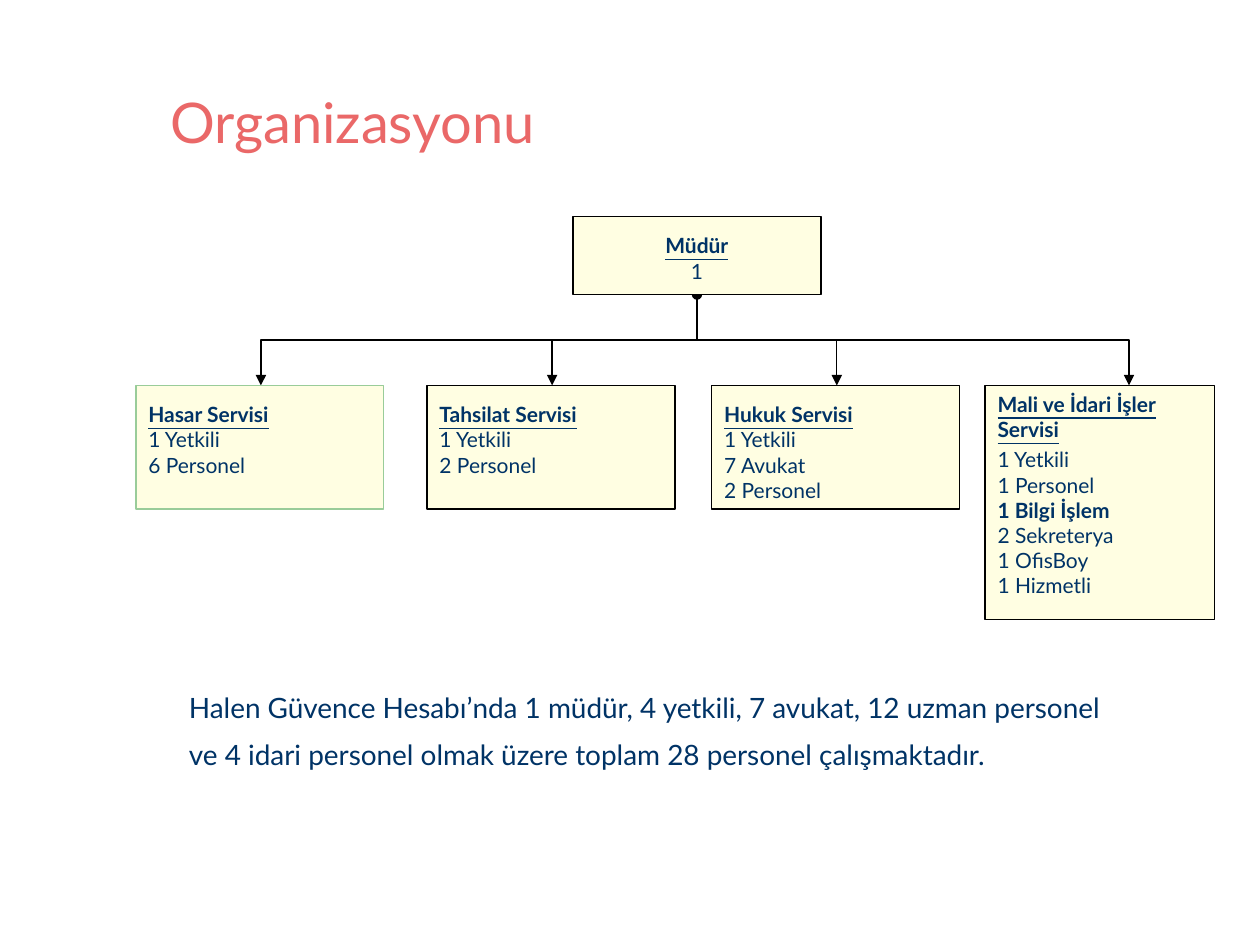
from lxml.etree import SubElement
from pptx import Presentation
from pptx.dml.color import RGBColor
from pptx.enum.shapes import MSO_CONNECTOR, MSO_SHAPE
from pptx.enum.text import MSO_ANCHOR, PP_ALIGN
from pptx.oxml.ns import qn
from pptx.util import Cm, Pt

FONT = "Lato"
CORAL = RGBColor(0xEA, 0x68, 0x68)
NAVY = RGBColor(0x00, 0x33, 0x66)
CREAM = RGBColor(0xFF, 0xFE, 0xE2)
GREEN = RGBColor(0x99, 0xCC, 0x99)
BLACK = RGBColor(0, 0, 0)

MANAGER_X, MANAGER_BOTTOM = 14.05, 5.94
SERVICE_TOP = 7.77
BOX_WIDTH = 5

# left, width, height, arrow x, border, heading, staff
SERVICES = [
    (2.74, BOX_WIDTH, 2.49, 5.26, GREEN, "Hasar Servisi",
     ["1 Yetkili", "6 Personel"]),
    (8.61, BOX_WIDTH, 2.49, 11.13, BLACK, "Tahsilat Servisi",
     ["1 Yetkili", "2 Personel"]),
    (14.35, BOX_WIDTH, 2.49, 16.87, BLACK, "Hukuk Servisi",
     ["1 Yetkili", "7 Avukat", "2 Personel"]),
    (19.86, 4.62, 4.72, 22.76, BLACK, "Mali ve İdari İşler Servisi",
     ["1 Yetkili", "1 Personel", "1 Bilgi İşlem", "2 Sekreterya",
      "1 OfisBoy", "1 Hizmetli"]),
]
BOLD_STAFF = {"1 Bilgi İşlem"}


def style(paragraph, size, color, bold=False, underline=False):
    font = paragraph.font
    font.name, font.size = FONT, Pt(size)
    font.bold, font.underline = bold, underline
    font.color.rgb = color


def add_text(slide, left, top, width, height, text, size, color,
             anchor=MSO_ANCHOR.TOP, spacing=1.0):
    frame = slide.shapes.add_textbox(
        Cm(left), Cm(top), Cm(width), Cm(height)).text_frame
    frame.word_wrap = True
    frame.vertical_anchor = anchor
    paragraph = frame.paragraphs[0]
    paragraph.text = text
    paragraph.line_spacing = spacing
    style(paragraph, size, color)


def add_unit(slide, left, top, width, height, border, heading, staff,
             align=PP_ALIGN.LEFT, heading_spacing=1.4, staff_spacing=1.0):
    unit = slide.shapes.add_shape(
        MSO_SHAPE.RECTANGLE, Cm(left), Cm(top), Cm(width), Cm(height))
    unit.shadow.inherit = False
    unit.fill.solid()
    unit.fill.fore_color.rgb = CREAM
    unit.line.color.rgb = border
    unit.line.width = Pt(0.75)
    frame = unit.text_frame
    frame.word_wrap = True
    frame.vertical_anchor = MSO_ANCHOR.TOP

    title = frame.paragraphs[0]
    title.text = heading
    title.alignment = align
    title.line_spacing = heading_spacing
    style(title, 12, NAVY, bold=True, underline=True)
    for index, member in enumerate(staff):
        row = frame.add_paragraph()
        row.text = member
        row.alignment = align
        row.line_spacing = staff_spacing if index == 0 else 1.0
        style(row, 12, NAVY, bold=member in BOLD_STAFF)


def add_branch(slide, target_x, oval_start=False):
    """Elbow from the manager down to a service, as a turned connector."""
    drop = SERVICE_TOP - MANAGER_BOTTOM
    span = abs(target_x - MANAGER_X)
    mid_x = (MANAGER_X + target_x) / 2
    mid_y = (MANAGER_BOTTOM + SERVICE_TOP) / 2
    side = 1 if target_x < MANAGER_X else -1
    branch = slide.shapes.add_connector(
        MSO_CONNECTOR.ELBOW,
        Cm(mid_x - side * drop / 2), Cm(mid_y - span / 2),
        Cm(mid_x + side * drop / 2), Cm(mid_y + span / 2))
    branch.line.color.rgb = BLACK
    branch.line.width = Pt(0.75)
    properties = branch.element.spPr
    quarter_turns = 1 if side == 1 else 3
    properties.find(qn("a:xfrm")).set("rot", str(quarter_turns * 90 * 60000))
    outline = properties.find(qn("a:ln"))
    if oval_start:
        SubElement(outline, qn("a:headEnd"), type="oval")
    SubElement(outline, qn("a:tailEnd"), type="triangle")
    SubElement(properties, qn("a:effectLst"))


def main():
    presentation = Presentation()
    presentation.slide_width, presentation.slide_height = Cm(25.4), Cm(19.05)
    slide = presentation.slides.add_slide(presentation.slide_layouts[6])

    # Title
    add_text(slide, 3.18, 1.63, 20.96, 1.6, "Organizasyonu", 32, CORAL)

    # Branches, behind the boxes
    for index, service in enumerate(SERVICES):
        add_branch(slide, service[3], oval_start=index == 0)

    # Manager and services
    add_unit(slide, MANAGER_X - BOX_WIDTH / 2, 4.37, BOX_WIDTH,
             MANAGER_BOTTOM - 4.37, BLACK, "Müdür", ["1"], PP_ALIGN.CENTER)
    for left, width, height, _, border, heading, staff in SERVICES:
        two_line_heading = width < BOX_WIDTH
        add_unit(slide, left, SERVICE_TOP, width, height, border, heading, staff,
                 heading_spacing=1.0 if two_line_heading else 1.4,
                 staff_spacing=1.2 if two_line_heading else 1.0)

    # Staff summary
    add_text(slide, 3.56, 13.51, 19.2, 2.18,
             "Halen Güvence Hesabı’nda 1 müdür, 4 yetkili, 7 avukat, "
             "12 uzman personel ve 4 idari personel olmak üzere toplam "
             "28 personel çalışmaktadır.",
             16, NAVY, MSO_ANCHOR.MIDDLE, 1.4)

    presentation.save("out.pptx")


if __name__ == "__main__":
    main()
